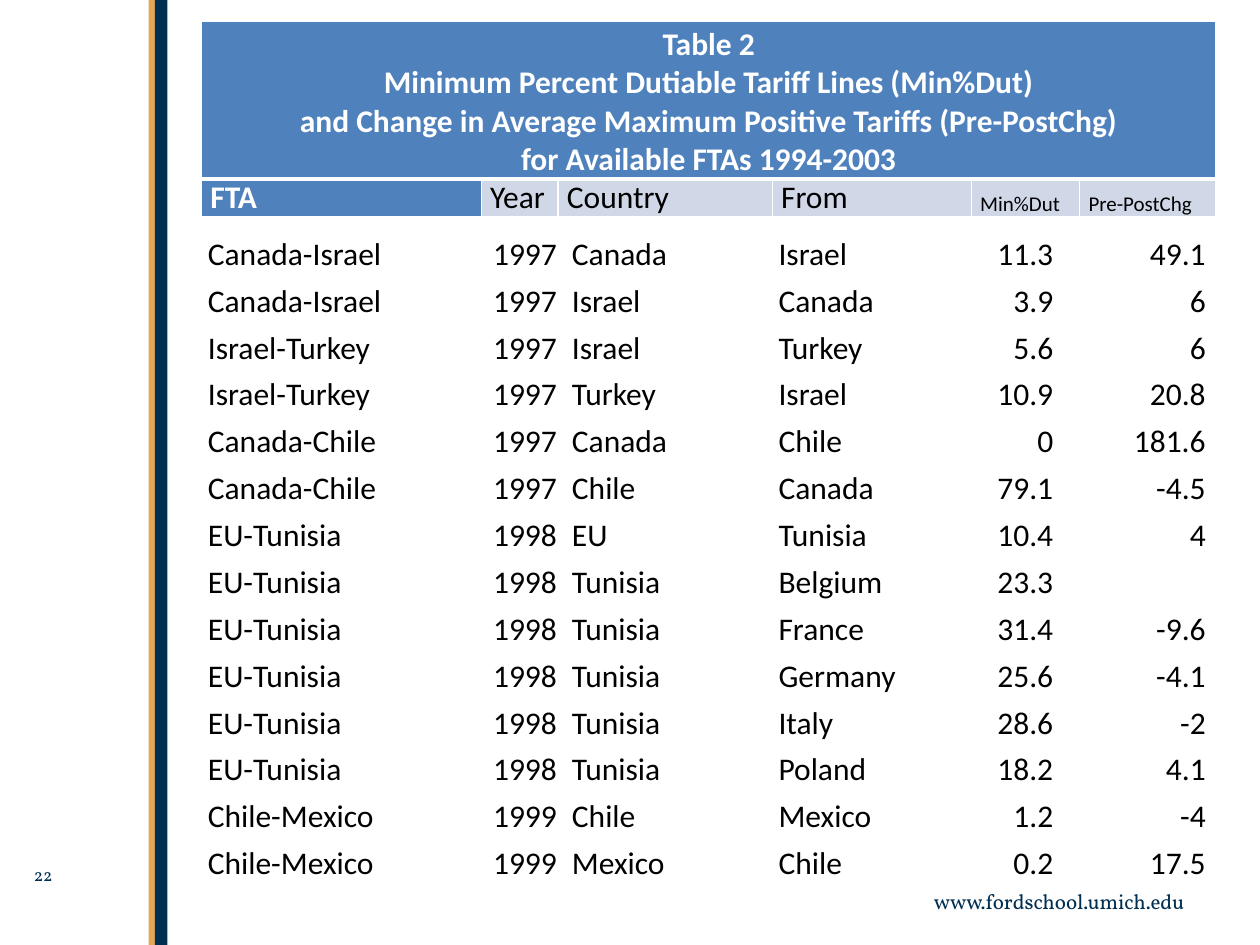
import collections
import pptx
import pptx.dml.color
import pptx.enum.shapes
import pptx.enum.text
import pptx.oxml
import pptx.oxml.ns
import pptx.util

COLORS = {"navy": "002F52", "gold": "E3A856", "blue": "4F81BD",
          "pale": "D0D8E8", "white": "FFFFFF", "black": "000000"}
SLIDE_WIDTH = pptx.util.Inches(10)
SLIDE_HEIGHT = pptx.util.Inches(7.5)
COLUMN = SLIDE_WIDTH / 100
ROW = SLIDE_HEIGHT / 75
PLAIN_TABLE_STYLE = "{2D5ABB26-0587-4C30-8999-92F81FD0307C}"
LEFT = pptx.enum.text.PP_ALIGN.LEFT
CENTER = pptx.enum.text.PP_ALIGN.CENTER
RIGHT = pptx.enum.text.PP_ALIGN.RIGHT

Box = collections.namedtuple("Box", "left top width height")

TITLE = [
    "Table 2",
    "Minimum Percent Dutiable Tariff Lines (Min%Dut)",
    "and Change in Average Maximum Positive Tariffs (Pre-PostChg)",
    "for Available FTAs 1994-2003",
]
HEADINGS = ["FTA", "Year", "Country", "From", "Min%Dut", "Pre-PostChg"]
TARIFFS = [
    ("Canada-Israel", "1997", "Canada", "Israel", "11.3", "49.1"),
    ("Canada-Israel", "1997", "Israel", "Canada", "3.9", "6"),
    ("Israel-Turkey", "1997", "Israel", "Turkey", "5.6", "6"),
    ("Israel-Turkey", "1997", "Turkey", "Israel", "10.9", "20.8"),
    ("Canada-Chile", "1997", "Canada", "Chile", "0", "181.6"),
    ("Canada-Chile", "1997", "Chile", "Canada", "79.1", "-4.5"),
    ("EU-Tunisia", "1998", "EU", "Tunisia", "10.4", "4"),
    ("EU-Tunisia", "1998", "Tunisia", "Belgium", "23.3", ""),
    ("EU-Tunisia", "1998", "Tunisia", "France", "31.4", "-9.6"),
    ("EU-Tunisia", "1998", "Tunisia", "Germany", "25.6", "-4.1"),
    ("EU-Tunisia", "1998", "Tunisia", "Italy", "28.6", "-2"),
    ("EU-Tunisia", "1998", "Tunisia", "Poland", "18.2", "4.1"),
    ("Chile-Mexico", "1999", "Chile", "Mexico", "1.2", "-4"),
    ("Chile-Mexico", "1999", "Mexico", "Chile", "0.2", "17.5"),
]


def grid_box(left, top, width, height):
    return Box(round(left * COLUMN), round(top * ROW),
               round(width * COLUMN), round(height * ROW))


def rgb(name):
    return pptx.dml.color.RGBColor.from_string(COLORS[name])


def write(frame, lines, size, color, face="Calibri", bold=False, align=LEFT):
    for index, line in enumerate(lines):
        paragraph = frame.add_paragraph() if index else frame.paragraphs[0]
        paragraph.alignment = align
        run = paragraph.add_run()
        run.text = line
        run.font.name = face
        run.font.size = pptx.util.Pt(size)
        run.font.bold = bold
        run.font.color.rgb = rgb(color)


def add_stripes(slide, box):
    gold_width = box.width // 3
    stripes = [("gold", box.left, gold_width),
               ("navy", box.left + gold_width, box.width - gold_width)]
    for color, left, width in stripes:
        stripe = slide.shapes.add_shape(
            pptx.enum.shapes.MSO_SHAPE.RECTANGLE, left, box.top, width, box.height)
        stripe.shadow.inherit = False
        stripe.fill.solid()
        stripe.fill.fore_color.rgb = rgb(color)
        stripe.line.fill.background()


def add_label(slide, box, text, size, align):
    frame = slide.shapes.add_textbox(*box).text_frame
    frame.word_wrap = True
    write(frame, [text], size, "navy", face="Vollkorn", align=align)


def add_grid(slide, box, column_shares, row_shares):
    table = slide.shapes.add_table(len(row_shares), len(column_shares), *box).table
    properties = table._tbl.tblPr
    properties.find(pptx.oxml.ns.qn("a:tableStyleId")).text = PLAIN_TABLE_STYLE
    table.first_row = False
    table.horz_banding = False
    for column, share in zip(table.columns, column_shares):
        column.width = round(box.width * share / sum(column_shares))
    for row, share in zip(table.rows, row_shares):
        row.height = round(box.height * share / sum(row_shares))
    return table


def settle_cell(cell, margin, fill=None):
    cell.margin_left = cell.margin_right = round(margin * COLUMN)
    cell.margin_top = cell.margin_bottom = 0
    cell.vertical_anchor = pptx.enum.text.MSO_ANCHOR.BOTTOM
    if fill:
        cell.fill.solid()
        cell.fill.fore_color.rgb = rgb(fill)
    else:
        cell.fill.background()


def add_borders(cell, bottom, top):
    widths = {"lnL": 1, "lnR": 1, "lnT": top, "lnB": bottom}
    for index, (edge, width) in enumerate(widths.items()):
        border = pptx.oxml.parse_xml(
            f'<a:{edge} {pptx.oxml.ns.nsdecls("a")} w="{pptx.util.Pt(width)}">'
            f'<a:solidFill><a:srgbClr val="{COLORS["white"]}"/></a:solidFill>'
            f'</a:{edge}>')
        cell._tc.get_or_add_tcPr().insert(index, border)


def add_heading_table(slide, box):
    table = add_grid(slide, box, [2.22, 0.61, 1.7, 1.58, 0.86, 1.08], [1.25, 0.24])
    title = table.cell(0, 0)
    title.merge(table.cell(0, len(HEADINGS) - 1))
    write(title.text_frame, TITLE, 18, "white", bold=True, align=CENTER)
    for index, heading in enumerate(HEADINGS):
        first = index == 0
        settle_cell(table.cell(0, index), 0.7, "blue")
        add_borders(table.cell(0, index), bottom=3, top=1)
        cell = table.cell(1, index)
        settle_cell(cell, 0.7, "blue" if first else "pale")
        add_borders(cell, bottom=1, top=3)
        write(cell.text_frame, [heading], 18 if index < 4 else 12,
              "white" if first else "black", bold=first)


def add_tariff_table(slide, box):
    table = add_grid(slide, box, [2.22, 0.67, 1.64, 1.58, 0.72, 1.21],
                     [1] * len(TARIFFS))
    alignments = [LEFT, RIGHT, LEFT, LEFT, RIGHT, RIGHT]
    for row, tariff in enumerate(TARIFFS):
        for column, (value, align) in enumerate(zip(tariff, alignments)):
            cell = table.cell(row, column)
            settle_cell(cell, 0.6)
            if value:
                write(cell.text_frame, [value], 18, "black", align=align)


def main():
    deck = pptx.Presentation()
    deck.slide_width = SLIDE_WIDTH
    deck.slide_height = SLIDE_HEIGHT
    slide = deck.slides.add_slide(deck.slide_layouts[6])
    add_stripes(slide, grid_box(11.8, 0, 1.5, 75))
    add_label(slide, grid_box(70, 70, 25, 3), "www.fordschool.umich.edu", 12, RIGHT)
    add_label(slide, grid_box(1.7, 68.1, 9.2, 3.4), "22", 10, LEFT)
    add_heading_table(slide, grid_box(16, 1.7, 80.5, 14.9))
    add_tariff_table(slide, grid_box(15.9, 18, 80.4, 52.1))
    deck.save("out.pptx")


if __name__ == "__main__":
    main()
